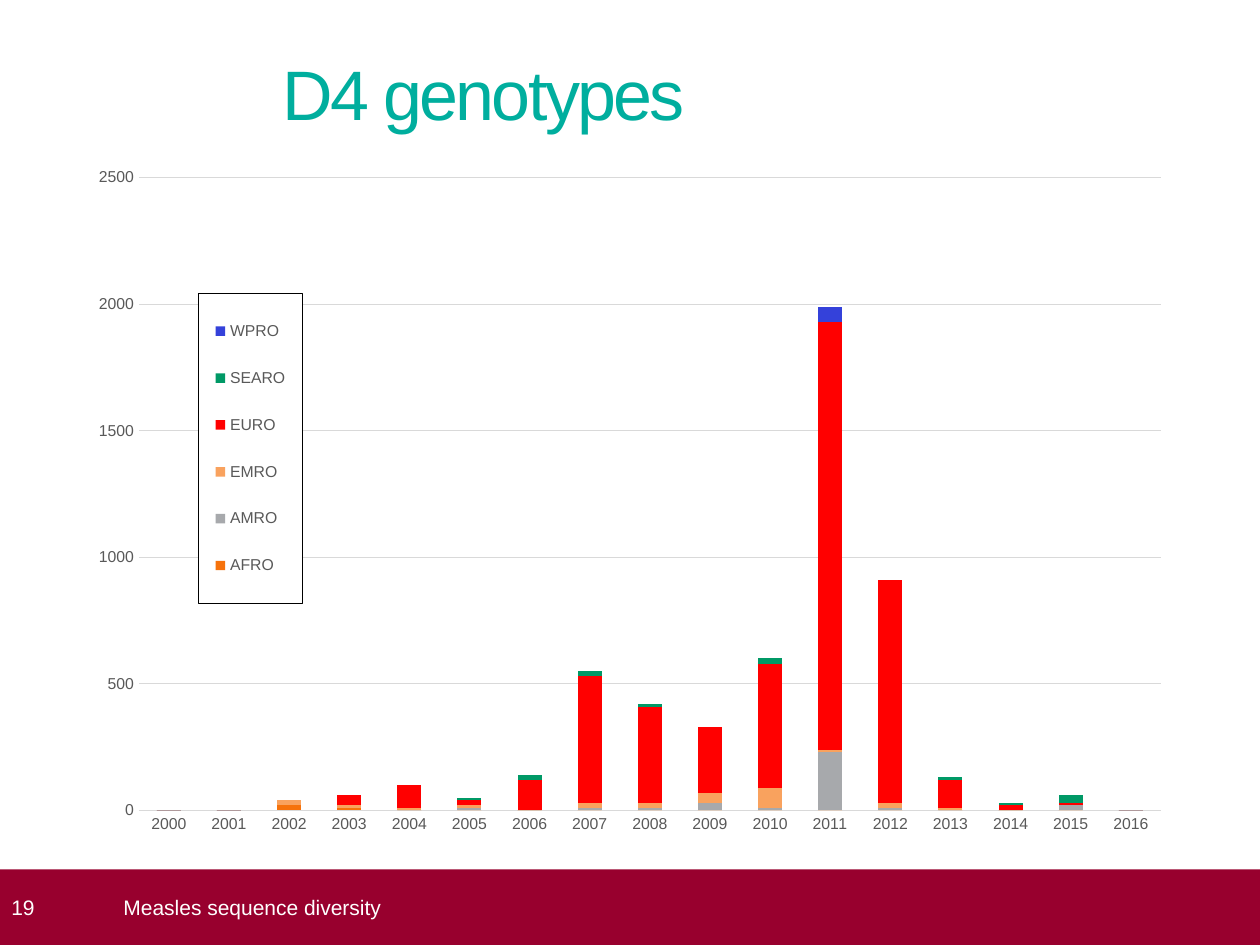
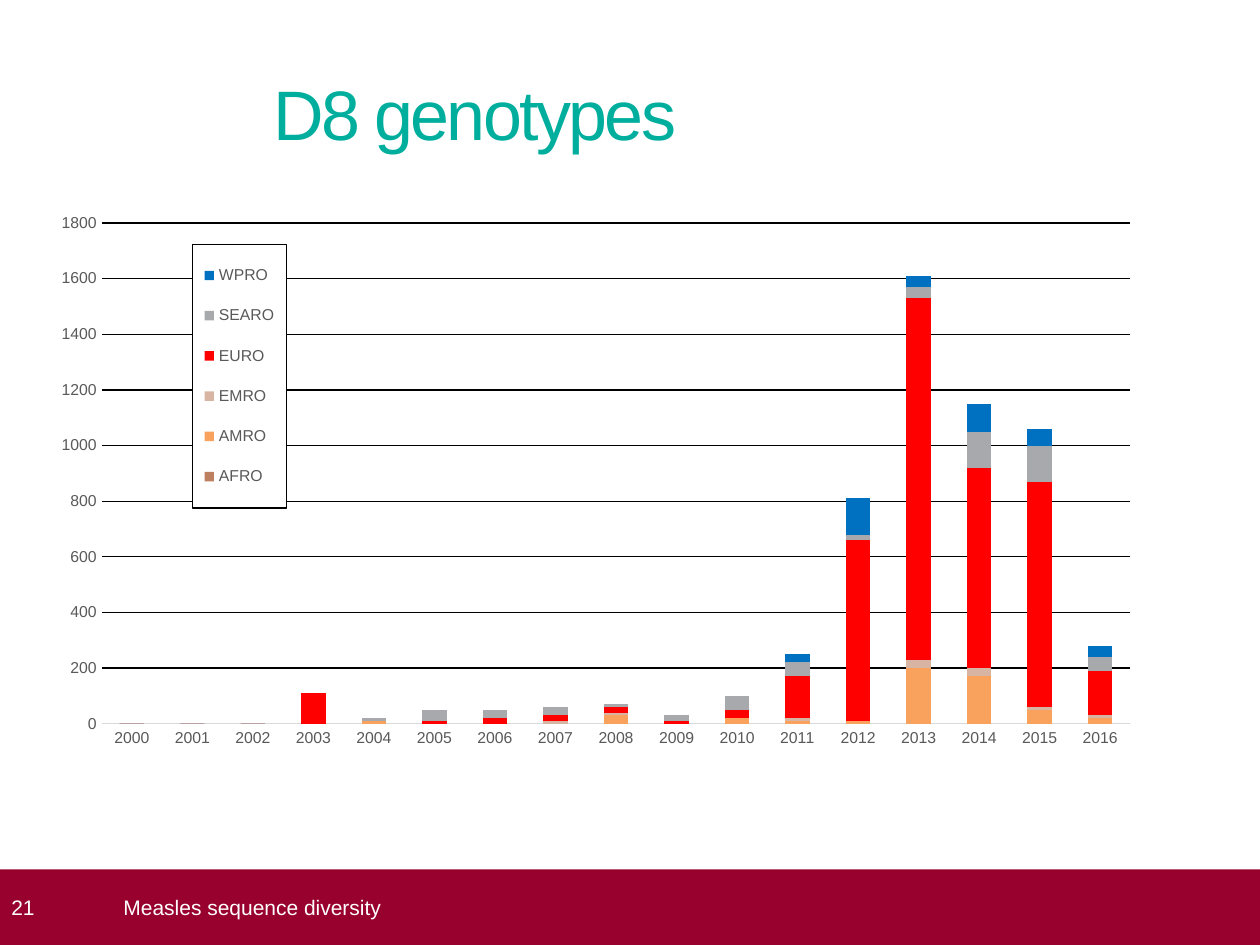
from lxml import etree
from pptx import Presentation
from pptx.chart.data import CategoryChartData
from pptx.dml.color import RGBColor
from pptx.enum.chart import XL_CHART_TYPE, XL_LEGEND_POSITION, XL_TICK_MARK
from pptx.enum.shapes import MSO_SHAPE
from pptx.enum.text import MSO_ANCHOR, PP_ALIGN
from pptx.oxml import parse_xml
from pptx.oxml.ns import nsdecls, qn
from pptx.util import Inches, Pt

WIDTH, HEIGHT = Inches(10), Inches(7.5)
FONT = "Arial"
COLORS = {
    "title": "00AE9E", "band": "98002E", "white": "FFFFFF", "black": "000000",
    "label": "595959", "rule": "D9D9D9", "orange": "F6720B", "grey": "A7A9AC",
    "apricot": "F9A25E", "red": "FF0000", "green": "009966", "indigo": "3441DA",
    "brown": "BC7F60", "sand": "D8B5A3", "blue": "0070C0",
}
YEARS = [str(year) for year in range(2000, 2017)]

# Boxes are left, top, width, height in percent of the slide;
# legend and plot boxes are in percent of the chart.
BAND_TOP, BAND_HEIGHT = 92, 8
SLIDES = [
    {
        "number": "19", "title": "D4 genotypes", "title_box": (22.4, 4.8, 87.8, 9.47),
        "chart_box": (6.1, 16.4, 87.8, 73.33), "legend_box": (11, 20, 9.4, 44.7),
        "plot_box": (5.6, 3.3, 92.4, 91.3), "axis": (2500, 500), "grid": "rule",
        "regions": [
            ("AFRO", "orange", [0, 0, 20, 10, 0, 0, 0, 0, 0, 0, 0, 0, 0, 0, 0, 0, 0]),
            ("AMRO", "grey", [0, 0, 0, 0, 0, 10, 0, 10, 10, 30, 10, 230, 10, 0, 0, 20, 0]),
            ("EMRO", "apricot", [0, 0, 20, 10, 10, 10, 0, 20, 20, 40, 80, 10, 20, 10, 0, 0, 0]),
            ("EURO", "red", [0, 0, 0, 40, 90, 20, 120, 500, 380, 260, 490, 1690, 880, 110,
                             20, 10, 0]),
            ("SEARO", "green", [0, 0, 0, 0, 0, 10, 20, 20, 10, 0, 20, 0, 0, 10, 10, 30, 0]),
            ("WPRO", "indigo", [0, 0, 0, 0, 0, 0, 0, 0, 0, 0, 0, 60, 0, 0, 0, 0, 0]),
        ],
    },
    {
        "number": "21", "title": "D8 genotypes", "title_box": (21.7, 6.93, 87.8, 9.47),
        "chart_box": (3.5, 21.6, 87.8, 59.33), "legend_box": (13.4, 7.2, 8.5, 47),
        "plot_box": (5.2, 3.4, 93, 89.3), "axis": (1800, 200), "grid": "black",
        "regions": [
            ("AFRO", "brown", [0] * len(YEARS)),
            ("AMRO", "apricot", [0, 0, 0, 0, 10, 0, 0, 0, 30, 0, 20, 10, 10, 200, 170, 50, 20]),
            ("EMRO", "sand", [0, 0, 0, 0, 0, 0, 0, 10, 10, 0, 0, 10, 0, 30, 30, 10, 10]),
            ("EURO", "red", [0, 0, 0, 110, 0, 10, 20, 20, 20, 10, 30, 150, 650, 1300, 720,
                             810, 160]),
            ("SEARO", "grey", [0, 0, 0, 0, 10, 40, 30, 30, 10, 20, 50, 50, 20, 40, 130, 130, 50]),
            ("WPRO", "blue", [0, 0, 0, 0, 0, 0, 0, 0, 0, 0, 0, 30, 130, 40, 100, 60, 40]),
        ],
    },
]


def color(name):
    return RGBColor.from_string(COLORS[name])


def place(box):
    left, top, width, height = (share / 100 for share in box)
    return int(left * WIDTH), int(top * HEIGHT), int(width * WIDTH), int(height * HEIGHT)


def style_font(font, size, color_name):
    font.name, font.size = FONT, Pt(size)
    font.color.rgb = color(color_name)


def write(shape, text, size, color_name, anchor=MSO_ANCHOR.MIDDLE, margin_left=0):
    """Put one left-aligned line into a shape and return its run."""
    frame = shape.text_frame
    frame.text = text
    frame.word_wrap = True
    frame.vertical_anchor = anchor
    frame.margin_left = Inches(margin_left)
    frame.margin_top = frame.margin_right = frame.margin_bottom = 0
    paragraph = frame.paragraphs[0]
    paragraph.alignment = PP_ALIGN.LEFT
    run = paragraph.runs[0]
    style_font(run.font, size, color_name)
    return run


def add_title(slide, text, box):
    title = slide.shapes.add_textbox(*place(box))
    run = write(title, text, 40, "title", MSO_ANCHOR.BOTTOM)
    run.font._element.set("spc", "-150")


def add_footer(slide, number):
    band = slide.shapes.add_shape(MSO_SHAPE.RECTANGLE, *place((0, BAND_TOP, 100, BAND_HEIGHT)))
    band.shadow.inherit = False
    band.fill.solid()
    band.fill.fore_color.rgb = color("band")
    band.line.fill.background()
    write(band, number, 12, "white", margin_left=0.09)
    label = slide.shapes.add_textbox(*place((9.8, BAND_TOP, 88.2, BAND_HEIGHT)))
    write(label, "Measles sequence diversity", 12, "white")


def manual_layout(box, inner=False):
    """Build a chart layout element from a box in percent of the chart."""
    layout = parse_xml(f"<c:layout {nsdecls('c')}><c:manualLayout/></c:layout>")
    settings = [("layoutTarget", "inner")] if inner else []
    settings += [("xMode", "edge"), ("yMode", "edge")]
    settings += [(key, f"{share / 100:.3f}") for key, share in zip("xywh", box)]
    for tag, value in settings:
        etree.SubElement(layout[0], qn(f"c:{tag}")).set("val", value)
    return layout


def remove_layout(element):
    for layout in element.findall(qn("c:layout")):
        element.remove(layout)


def style_axes(chart, limits, grid_color):
    for axis in (chart.category_axis, chart.value_axis):
        axis.major_tick_mark = axis.minor_tick_mark = XL_TICK_MARK.NONE
        style_font(axis.tick_labels.font, 9, "label")
    category_line = chart.category_axis.format.line
    category_line.color.rgb = color("rule")
    category_line.width = Pt(0.75)
    value_axis = chart.value_axis
    value_axis.format.line.fill.background()
    value_axis.minimum_scale = 0
    value_axis.maximum_scale, value_axis.major_unit = limits
    grid_line = value_axis.major_gridlines.format.line
    grid_line.color.rgb = color(grid_color)
    grid_line.width = Pt(0.75)


def style_legend(chart, box):
    chart.has_legend = True
    legend = chart.legend
    legend.position = XL_LEGEND_POSITION.CORNER
    legend.include_in_layout = True
    style_font(legend.font, 9, "label")
    element = legend._element
    remove_layout(element)
    overlay = element.find(qn("c:overlay"))
    overlay.addprevious(manual_layout(box))
    overlay.addnext(parse_xml(
        f"<c:spPr {nsdecls('c', 'a')}>"
        f"<a:solidFill><a:srgbClr val='{COLORS['white']}'/></a:solidFill>"
        f"<a:ln w='{Pt(0.75)}'><a:solidFill><a:srgbClr val='{COLORS['black']}'/></a:solidFill></a:ln>"
        "</c:spPr>"))


def add_case_chart(slide, content):
    data = CategoryChartData()
    data.categories = YEARS
    for region, _, cases in content["regions"]:
        data.add_series(region, cases)
    chart = slide.shapes.add_chart(
        XL_CHART_TYPE.COLUMN_STACKED, *place(content["chart_box"]), data).chart
    style_font(chart.font, 10, "black")
    chart.has_title = False

    # Stacked columns, one colour per region
    plot = chart.plots[0]
    plot.gap_width, plot.overlap = 150, 100
    plot.vary_by_categories = False
    for series, (_, color_name, _) in zip(plot.series, content["regions"]):
        series.format.fill.solid()
        series.format.fill.fore_color.rgb = color(color_name)

    style_axes(chart, content["axis"], content["grid"])
    style_legend(chart, content["legend_box"])
    plot_area = chart._chartSpace.chart.plotArea
    remove_layout(plot_area)
    plot_area.insert(0, manual_layout(content["plot_box"], inner=True))


def main():
    presentation = Presentation()
    presentation.slide_width, presentation.slide_height = WIDTH, HEIGHT
    for content in SLIDES:
        slide = presentation.slides.add_slide(presentation.slide_layouts[6])
        add_title(slide, content["title"], content["title_box"])
        add_footer(slide, content["number"])
        add_case_chart(slide, content)
    presentation.save("out.pptx")


if __name__ == "__main__":
    main()
